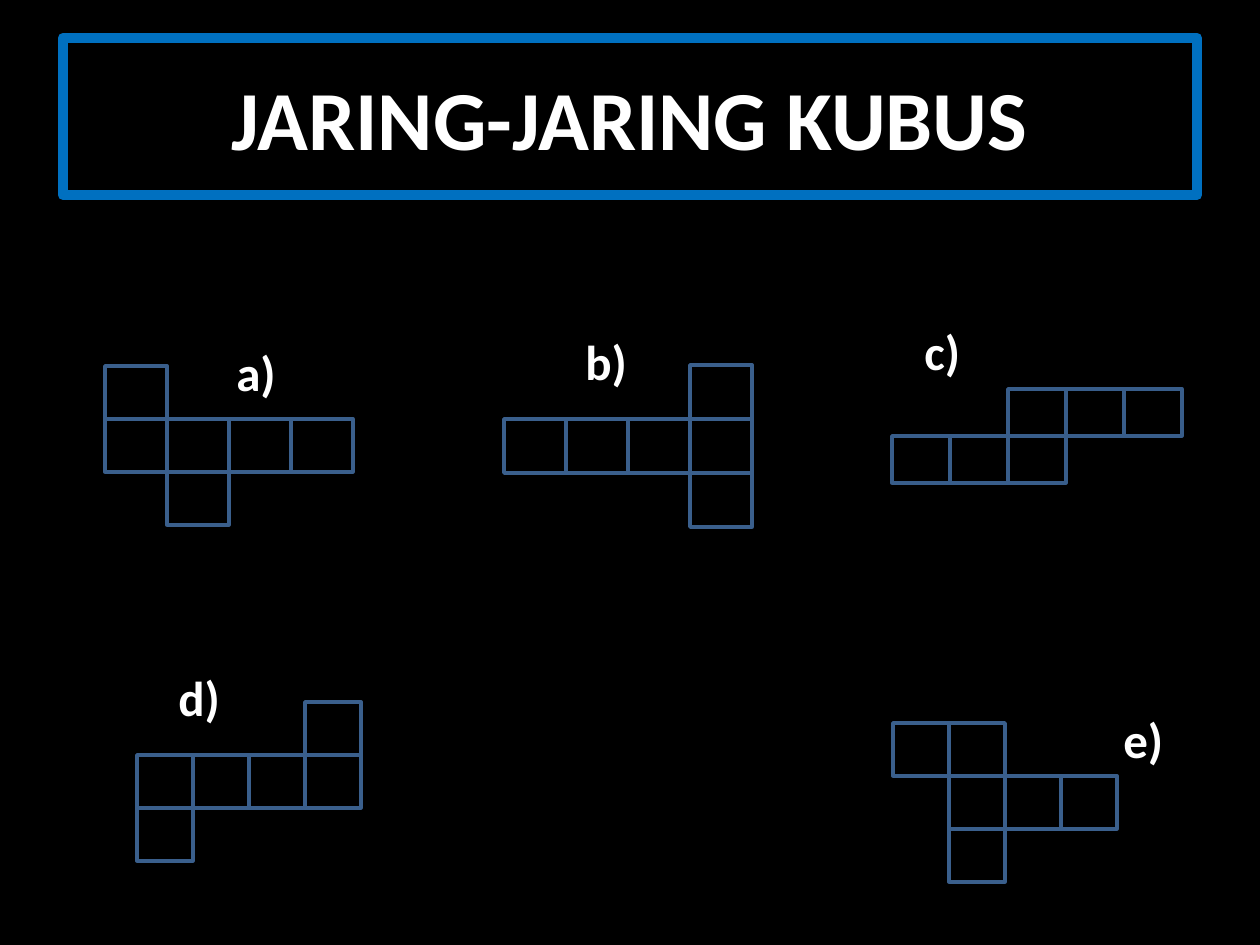
from pptx import Presentation
from pptx.dml.color import RGBColor
from pptx.enum.shapes import MSO_SHAPE as Shape
from pptx.enum.text import MSO_ANCHOR as Anchor, MSO_AUTO_SIZE as AutoSize, PP_ALIGN as Align
from pptx.util import Pt

PX = 914400 / 126


def emu(*lengths):
    """Turn px lengths into EMU."""
    return [round(length * PX) for length in lengths]


def style(item, font=None, line=None, fill=None):
    """Set the text font, or the outline and fill, from format values."""
    if font:
        run_font = item.font
        run_font.color.rgb = RGBColor.from_string(font["color"])
        for name in ("name", "size", "bold"):
            setattr(run_font, name, font[name])
    if line:
        item.shadow.inherit = False
        item.fill.background()
        item.line.color.rgb = RGBColor.from_string(line["color"])
        item.line.width = line["width"]
    if fill:
        item.fill.solid()
        item.fill.fore_color.rgb = RGBColor.from_string(fill)


TITLE_FONT = {"name": "Calibri", "size": Pt(48), "bold": True, "color": "FFFFFF"}
LABEL_FONT = {**TITLE_FONT, "size": Pt(28)}

# label, label box, net corner, cell size, line colour, rows of the net
NETS = [
    ("c)", (912, 315, 62, 72), (892, 389), (58, 47), "385D8A", ["..###", "###.."]),
    ("a)", (224, 336, 66, 72), (105, 366), (62, 53), "3A5F8C", ["#...", "####", ".#.."]),
    ("e)", (1111, 703, 66, 72), (893, 723), (56, 53), "3A5F8C", ["##..", ".###", ".#.."]),
    ("d)", (166, 661, 67, 72), (137, 702), (56, 53), "3A5F8C", ["...#", "####", "#..."]),
    ("b)", (573, 325, 67, 72), (504, 365), (62, 54), "3A5F8C", ["...#", "####", "...#"]),
]

presentation = Presentation()
presentation.slide_width, presentation.slide_height = emu(1260, 945)
slide = presentation.slides.add_slide(presentation.slide_layouts[6])
style(slide.background, fill="000000")

title = slide.shapes.add_shape(Shape.RECTANGLE, *emu(63, 38, 1134, 157))
style(title, line={"color": "0070C0", "width": Pt(6)})
title.text_frame.vertical_anchor = Anchor.MIDDLE
paragraph = title.text_frame.paragraphs[0]
paragraph.alignment = Align.CENTER
run = paragraph.add_run()
run.text = "JARING-JARING KUBUS"
style(run, font=TITLE_FONT)

for label, label_box, (left, top), (width, height), color, rows in NETS:
    group = slide.shapes.add_group_shape()
    for row, cells in enumerate(rows):
        for column, mark in enumerate(cells):
            if mark == "#":
                box = emu(left + column * width, top + row * height, width, height)
                face = group.shapes.add_shape(Shape.RECTANGLE, *box)
                style(face, line={"color": color, "width": Pt(2)})

    text_box = group.shapes.add_textbox(*emu(*label_box))
    text_frame = text_box.text_frame
    text_frame.word_wrap = False
    text_frame.auto_size = AutoSize.SHAPE_TO_FIT_TEXT
    run = text_frame.paragraphs[0].add_run()
    run.text = label
    style(run, font=LABEL_FONT)

presentation.save("out.pptx")
